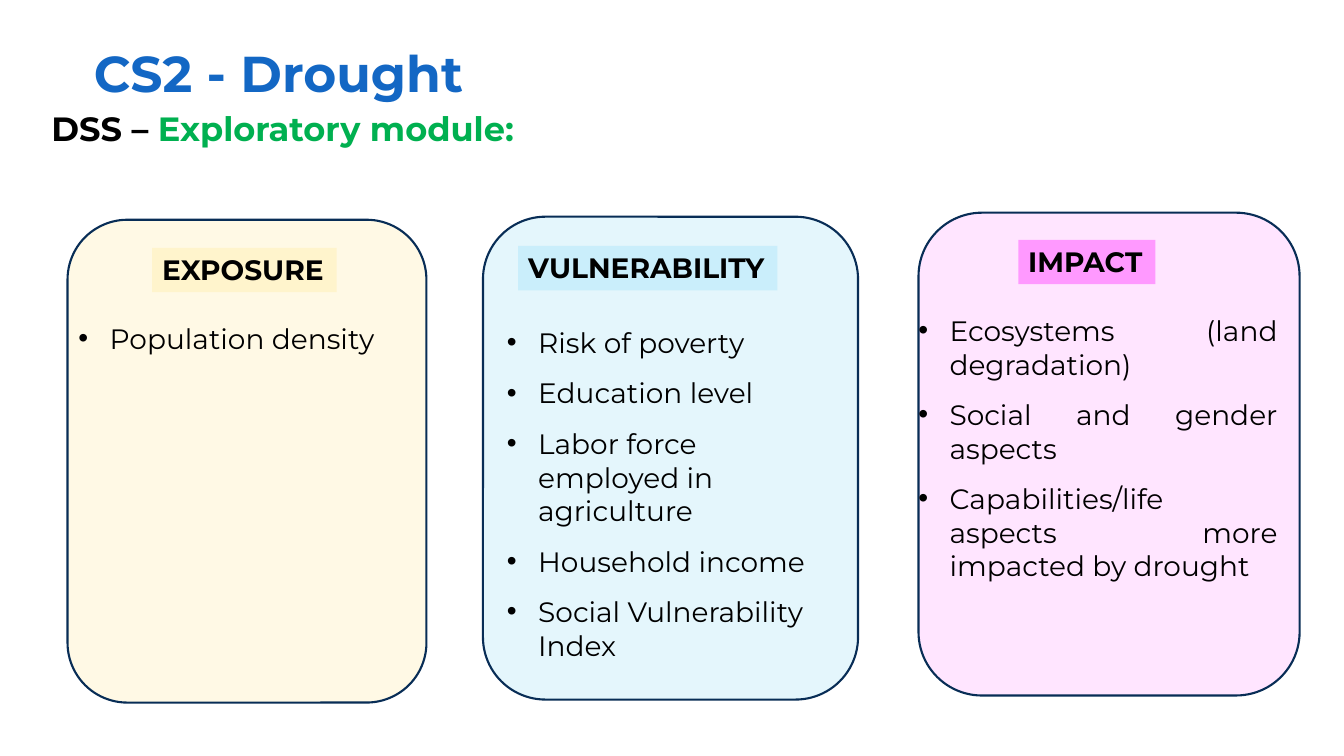
from dataclasses import dataclass

from lxml import etree
from pptx import Presentation
from pptx.dml.color import RGBColor
from pptx.enum.shapes import MSO_SHAPE
from pptx.enum.text import MSO_ANCHOR, MSO_AUTO_SIZE, PP_ALIGN
from pptx.oxml.ns import qn
from pptx.util import Inches, Pt

ROUNDED, RECTANGLE = MSO_SHAPE.ROUNDED_RECTANGLE, MSO_SHAPE.RECTANGLE
LEFT, JUSTIFY = PP_ALIGN.LEFT, PP_ALIGN.JUSTIFY
TOP, MIDDLE = MSO_ANCHOR.TOP, MSO_ANCHOR.MIDDLE
NO_AUTOFIT = MSO_AUTO_SIZE.NONE


@dataclass(frozen=True)
class Theme:
    font: str = "Montserrat"
    title_size: int = 36
    subtitle_size: int = 24
    text_size: int = 20
    text: str = "000000"
    title: str = "1367C4"
    module: str = "00B050"
    outline: str = "082D56"
    exposure: str = "FFF4CC"
    vulnerability: str = "CAEEFB"
    impact: str = "FFCCFF"
    impact_label: str = "FF99FF"


class SlideBuilder:
    def __init__(self, slide, theme):
        self.slide = slide
        self.theme = theme

    def add_run(self, paragraph, text, size, color, bold=False):
        run = paragraph.add_run()
        run.text = text
        run.font.name = self.theme.font
        run.font.size = Pt(size)
        run.font.bold = bold
        run.font.color.rgb = RGBColor.from_string(color)

    def fill_placeholder(self, placeholder, box, anchor, size, runs):
        """Move a one-line placeholder and write its (text, color) runs."""
        placeholder.left, placeholder.top, placeholder.width, placeholder.height = map(Inches, box)
        frame = placeholder.text_frame
        frame.auto_size = NO_AUTOFIT
        frame.vertical_anchor = anchor
        paragraph = frame.paragraphs[0]
        properties = paragraph._p.get_or_add_pPr()
        properties.set("marL", "0")
        properties.set("indent", "0")
        etree.SubElement(properties, qn("a:buNone"))
        paragraph.alignment = LEFT
        paragraph.line_spacing = 0.9
        paragraph.space_before = Pt(0)
        for text, color in runs:
            self.add_run(paragraph, text, size, color, bold=True)

    def add_filled_shape(self, kind, box, color):
        shape = self.slide.shapes.add_shape(kind, *map(Inches, box))
        shape.shadow.inherit = False
        shape.fill.solid()
        shape.fill.fore_color.rgb = RGBColor.from_string(color)
        return shape

    def add_card(self, box, color):
        card = self.add_filled_shape(ROUNDED, box, color)
        card.line.color.rgb = RGBColor.from_string(self.theme.outline)
        card.line.width = Pt(1.5)
        fill_color = card._element.spPr.find(qn("a:solidFill")).find(qn("a:srgbClr"))
        etree.SubElement(fill_color, qn("a:alpha"), val="50000")

    def add_label(self, box, color, text):
        label = self.add_filled_shape(RECTANGLE, box, color)
        label.line.fill.background()
        frame = label.text_frame
        frame.word_wrap = False
        frame.vertical_anchor = TOP
        paragraph = frame.paragraphs[0]
        paragraph.alignment = LEFT
        self.add_run(paragraph, text, self.theme.text_size, self.theme.text, bold=True)

    def add_bullets(self, box, items, alignment):
        frame = self.slide.shapes.add_textbox(*map(Inches, box)).text_frame
        frame.word_wrap = True
        for index, item in enumerate(items):
            paragraph = frame.add_paragraph() if index else frame.paragraphs[0]
            properties = paragraph._p.get_or_add_pPr()
            properties.set("marL", str(Inches(0.31)))
            properties.set("indent", str(-Inches(0.31)))
            etree.SubElement(properties, qn("a:buFont"), typeface="Arial")
            etree.SubElement(properties, qn("a:buChar"), char="•")
            paragraph.alignment = alignment
            paragraph.space_before = Pt(6 if index else 0)
            paragraph.space_after = Pt(6)
            self.add_run(paragraph, item, self.theme.text_size, self.theme.text)


def main():
    theme = Theme()
    presentation = Presentation()
    presentation.slide_width = Inches(13.33)
    presentation.slide_height = Inches(7.5)
    slide = presentation.slides.add_slide(presentation.slide_layouts[1])
    builder = SlideBuilder(slide, theme)

    # Headings
    builder.fill_placeholder(slide.shapes.title, (0.83, 0.4, 11.5, 0.72), MIDDLE,
                             theme.title_size, [("CS2 - Drought", theme.title)])
    builder.fill_placeholder(slide.placeholders[1], (0.41, 1.07, 6.33, 1.02), TOP,
                             theme.subtitle_size,
                             [("DSS – ", theme.text), ("Exploratory module:", theme.module)])

    # Columns: card, label and list
    columns = [
        ((0.67, 2.18, 3.56, 4.79), theme.exposure,
         (1.51, 2.46, 1.83, 0.44), theme.exposure, "EXPOSURE",
         (0.68, 3.14, 3.17, 0.44), LEFT, ["Population density"]),
        ((4.79, 2.15, 3.72, 4.79), theme.vulnerability,
         (5.14, 2.44, 2.57, 0.44), theme.vulnerability, "VULNERABILITY",
         (4.93, 3.18, 3.5, 3.85), LEFT,
         ["Risk of poverty", "Education level", "Labor force employed in agriculture",
          "Household income", "Social Vulnerability Index"]),
        ((9.11, 2.11, 3.78, 4.79), theme.impact,
         (10.1, 2.38, 1.36, 0.44), theme.impact_label, "IMPACT",
         (9.01, 3.06, 3.76, 2.79), JUSTIFY,
         ["Ecosystems (land degradation)", "Social and gender aspects",
          "Capabilities/life aspects more impacted by drought"]),
    ]
    for card, card_color, label, label_color, heading, text_box, alignment, items in columns:
        builder.add_card(card, card_color)
        builder.add_label(label, label_color, heading)
        builder.add_bullets(text_box, items, alignment)

    presentation.save("out.pptx")


if __name__ == "__main__":
    main()
